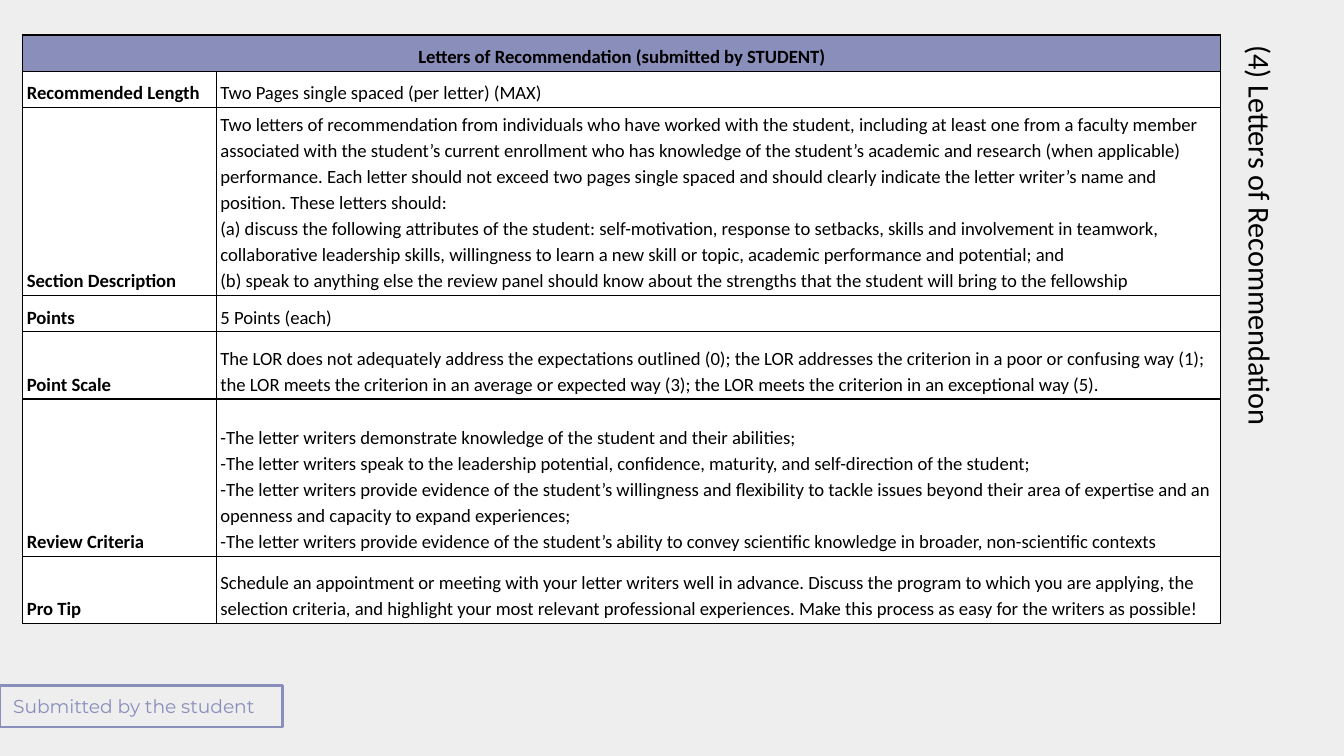
from lxml.etree import SubElement
from pptx import Presentation
from pptx.dml.color import RGBColor
from pptx.enum.shapes import MSO_SHAPE as Shape
from pptx.enum.text import MSO_ANCHOR as Anchor, MSO_AUTO_SIZE as AutoSize, PP_ALIGN as Align
from pptx.oxml.ns import qn
from pptx.util import Inches, Pt

LAVENDER, BLACK, WHITE, GREY = "8A8EBB", "000000", "FFFFFF", "EEEEEE"
COLUMN_WIDTHS = [1.44, 7.47]
ROW_HEIGHTS = [0.27, 0.27, 1.4, 0.27, 0.5, 1.17, 0.5]
HEADING = "Letters of Recommendation (submitted by STUDENT)"
REQUIREMENTS = [
    ("Recommended Length", ["Two Pages single spaced (per letter) (MAX)"]),
    ("Section Description", [
        "Two letters of recommendation from individuals who have worked with the student, "
        "including at least one from a faculty member associated with the student’s current "
        "enrollment who has knowledge of the student’s academic and research (when applicable) "
        "performance. Each letter should not exceed two pages single spaced and should clearly "
        "indicate the letter writer’s name and position. These letters should:",
        "(a) discuss the following attributes of the student: self-motivation, response to "
        "setbacks, skills and involvement in teamwork, collaborative leadership skills, "
        "willingness to learn a new skill or topic, academic performance and potential; and",
        "(b) speak to anything else the review panel should know about the strengths that the "
        "student will bring to the fellowship",
    ]),
    ("Points", ["5 Points (each)"]),
    ("Point Scale", [
        "The LOR does not adequately address the expectations outlined (0); the LOR addresses "
        "the criterion in a poor or confusing way (1); the LOR meets the criterion in an average "
        "or expected way (3); the LOR meets the criterion in an exceptional way (5).",
    ]),
    ("Review Criteria", [
        "-The letter writers demonstrate knowledge of the student and their abilities;",
        "-The letter writers speak to the leadership potential, confidence, maturity, and "
        "self-direction of the student;",
        "-The letter writers provide evidence of the student’s willingness and flexibility to "
        "tackle issues beyond their area of expertise and an openness and capacity to expand "
        "experiences;",
        "-The letter writers provide evidence of the student’s ability to convey scientific "
        "knowledge in broader, non-scientific contexts",
    ]),
    ("Pro Tip", [
        "Schedule an appointment or meeting with your letter writers well in advance. Discuss "
        "the program to which you are applying, the selection criteria, and highlight your most "
        "relevant professional experiences. Make this process as easy for the writers as possible!",
    ]),
]


def rgb(value):
    """Return the colour for a hex string."""
    return RGBColor.from_string(value)


def write(frame, paragraphs, size=10, font="Calibri", color=BLACK, bold=False,
          align=Align.LEFT, spacing=1.0):
    """Fill a text frame with equally formatted paragraphs."""
    frame.word_wrap = True
    for index, text in enumerate(paragraphs):
        paragraph = frame.add_paragraph() if index else frame.paragraphs[0]
        paragraph.alignment = align
        paragraph.line_spacing = spacing
        run = paragraph.add_run()
        run.text = text
        run.font.size = Pt(size)
        run.font.name = font
        run.font.bold = bold
        run.font.color.rgb = rgb(color)


def set_insets(frame, inset):
    """Give a text frame the same inset on all sides."""
    frame.margin_left = frame.margin_right = Inches(inset)
    frame.margin_top = frame.margin_bottom = Inches(inset)


def place_title(slide, text):
    """Turn the title placeholder into a vertical side heading."""
    title = slide.shapes.title
    title.left, title.top = Inches(7.02), Inches(2.2)
    title.width, title.height = Inches(4.56), Inches(0.63)
    title.rotation = 90
    frame = title.text_frame
    frame.auto_size = AutoSize.NONE
    frame.vertical_anchor = Anchor.TOP
    set_insets(frame, 0.1)
    write(frame, [text], size=16.2)


def add_tag(slide, text):
    """Add the outlined tag at the left edge."""
    tag = slide.shapes.add_shape(Shape.RECTANGLE, 0, Inches(5.1), Inches(2.1), Inches(0.31))
    tag.shadow.inherit = False
    tag.fill.background()
    tag.line.color.rgb = rgb(LAVENDER)
    tag.line.width = Pt(1.5)
    tag.text_frame.vertical_anchor = Anchor.MIDDLE
    set_insets(tag.text_frame, 0.1)
    write(tag.text_frame, [text], font="Montserrat", color=LAVENDER)


def style_cell(cell, fill):
    """Set the borders, fill, insets and anchor of a table cell."""
    properties = cell._tc.get_or_add_tcPr()
    for side in ("a:lnL", "a:lnR", "a:lnT", "a:lnB"):
        border = SubElement(properties, qn(side), w=str(Pt(0.75)))
        SubElement(SubElement(border, qn("a:solidFill")), qn("a:srgbClr"), val=BLACK)
    cell.fill.solid()
    cell.fill.fore_color.rgb = rgb(fill)
    cell.vertical_anchor = Anchor.BOTTOM
    cell.margin_left = cell.margin_right = Inches(0.03)
    cell.margin_top = cell.margin_bottom = Inches(0.02)


def add_requirements(slide):
    """Add the table of requirements under its merged heading."""
    table = slide.shapes.add_table(
        len(ROW_HEIGHTS), len(COLUMN_WIDTHS), Inches(0.17), Inches(0.26),
        Inches(sum(COLUMN_WIDTHS)), Inches(sum(ROW_HEIGHTS))).table
    table.first_row = table.horz_banding = False
    for column, width in zip(table.columns, COLUMN_WIDTHS):
        column.width = Inches(width)
    for index, (row, height) in enumerate(zip(table.rows, ROW_HEIGHTS)):
        row.height = Inches(height)
        for cell in row.cells:
            style_cell(cell, WHITE if index else LAVENDER)
    heading = table.cell(0, 0)
    heading.merge(table.cell(0, 1))
    write(heading.text_frame, [HEADING], bold=True, align=Align.CENTER, spacing=1.15)
    for index, (label, details) in enumerate(REQUIREMENTS, start=1):
        write(table.cell(index, 0).text_frame, [label], bold=True, spacing=1.15)
        write(table.cell(index, 1).text_frame, details, spacing=1.15)


def main():
    """Build and save the widescreen slide."""
    deck = Presentation()
    deck.slide_width = Inches(10)
    deck.slide_height = deck.slide_width * 9 // 16
    slide = deck.slides.add_slide(deck.slide_layouts[5])
    slide.background.fill.solid()
    slide.background.fill.fore_color.rgb = rgb(GREY)
    place_title(slide, "(4) Letters of Recommendation")
    add_tag(slide, "Submitted by the student")
    add_requirements(slide)
    deck.save("out.pptx")


if __name__ == "__main__":
    main()
